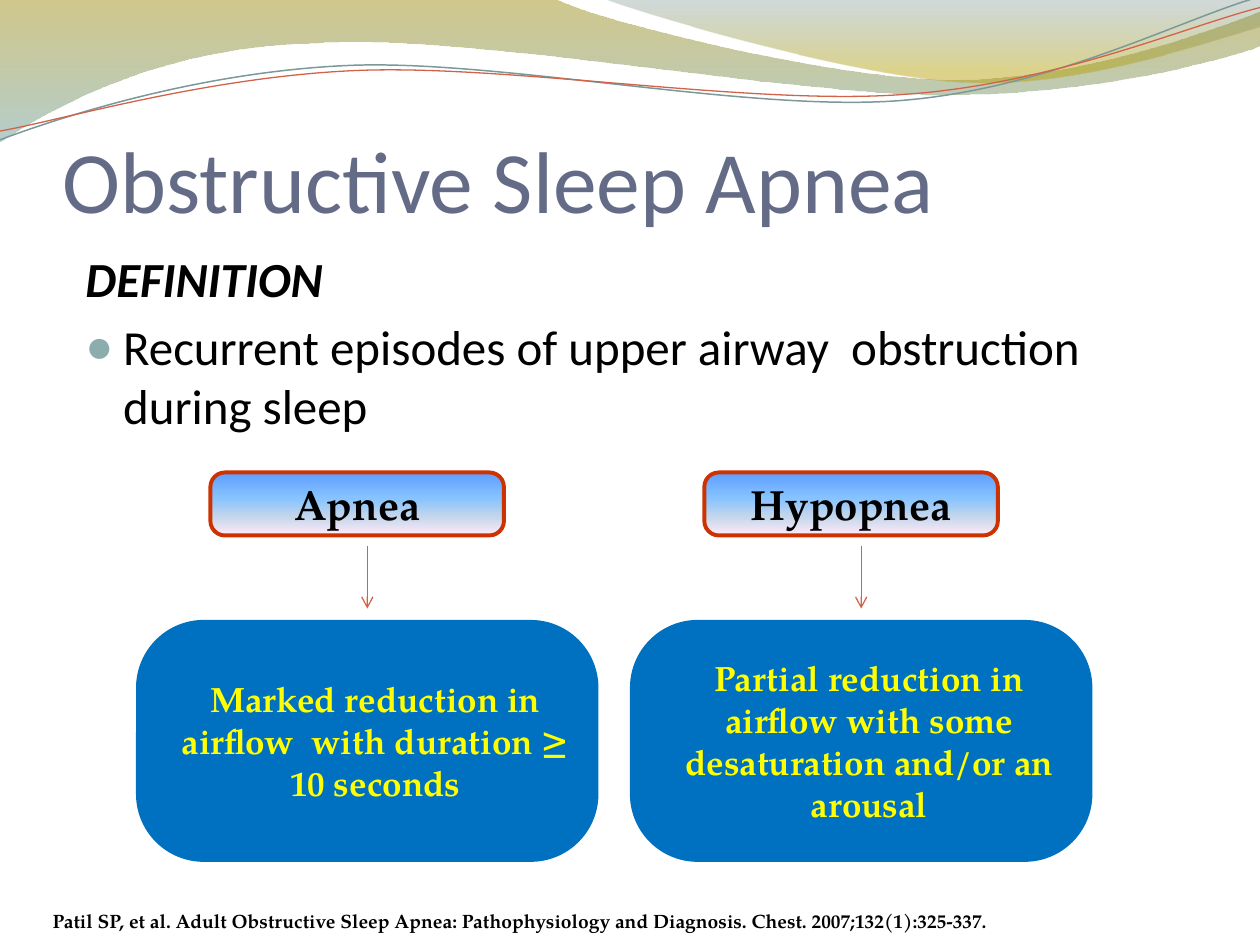
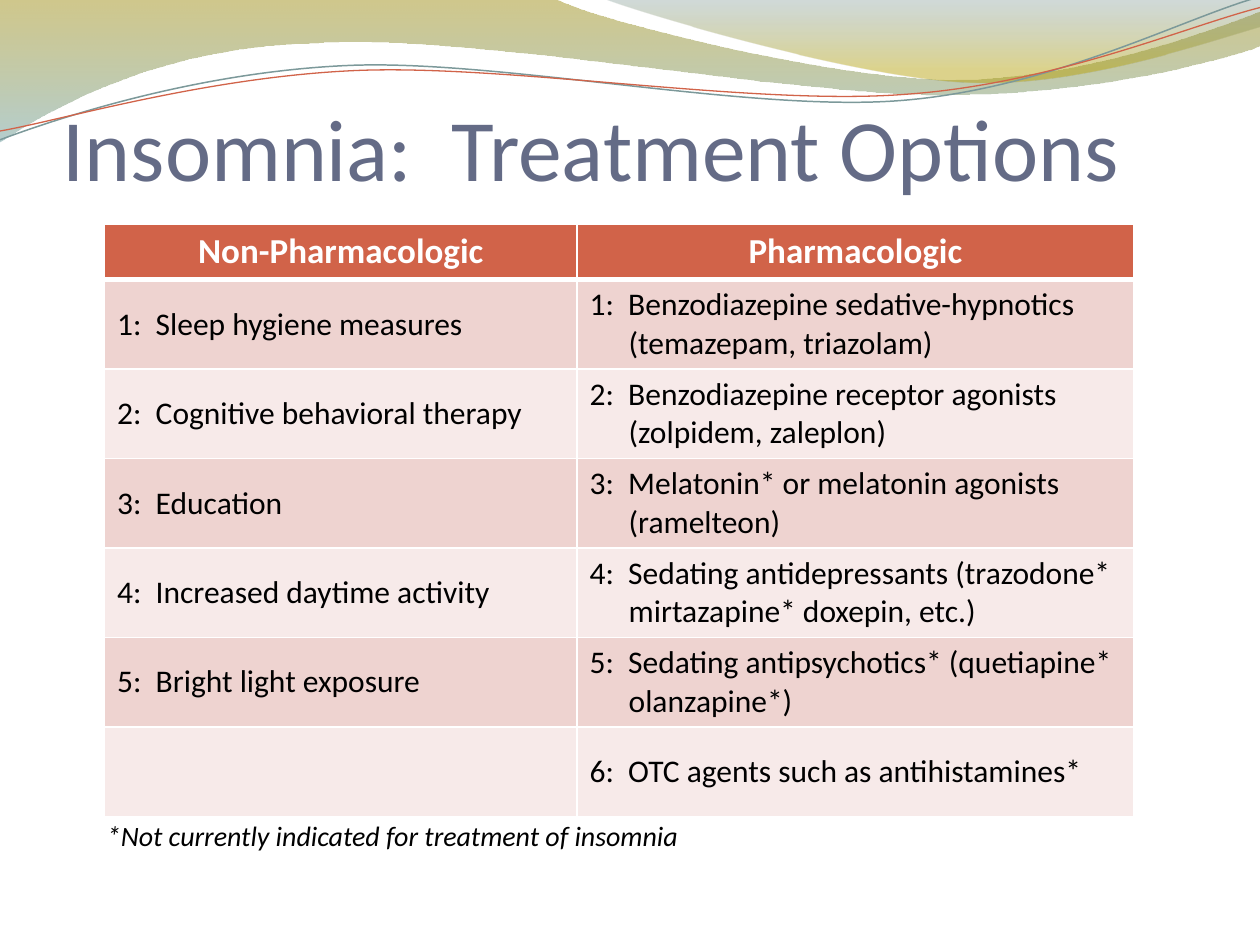
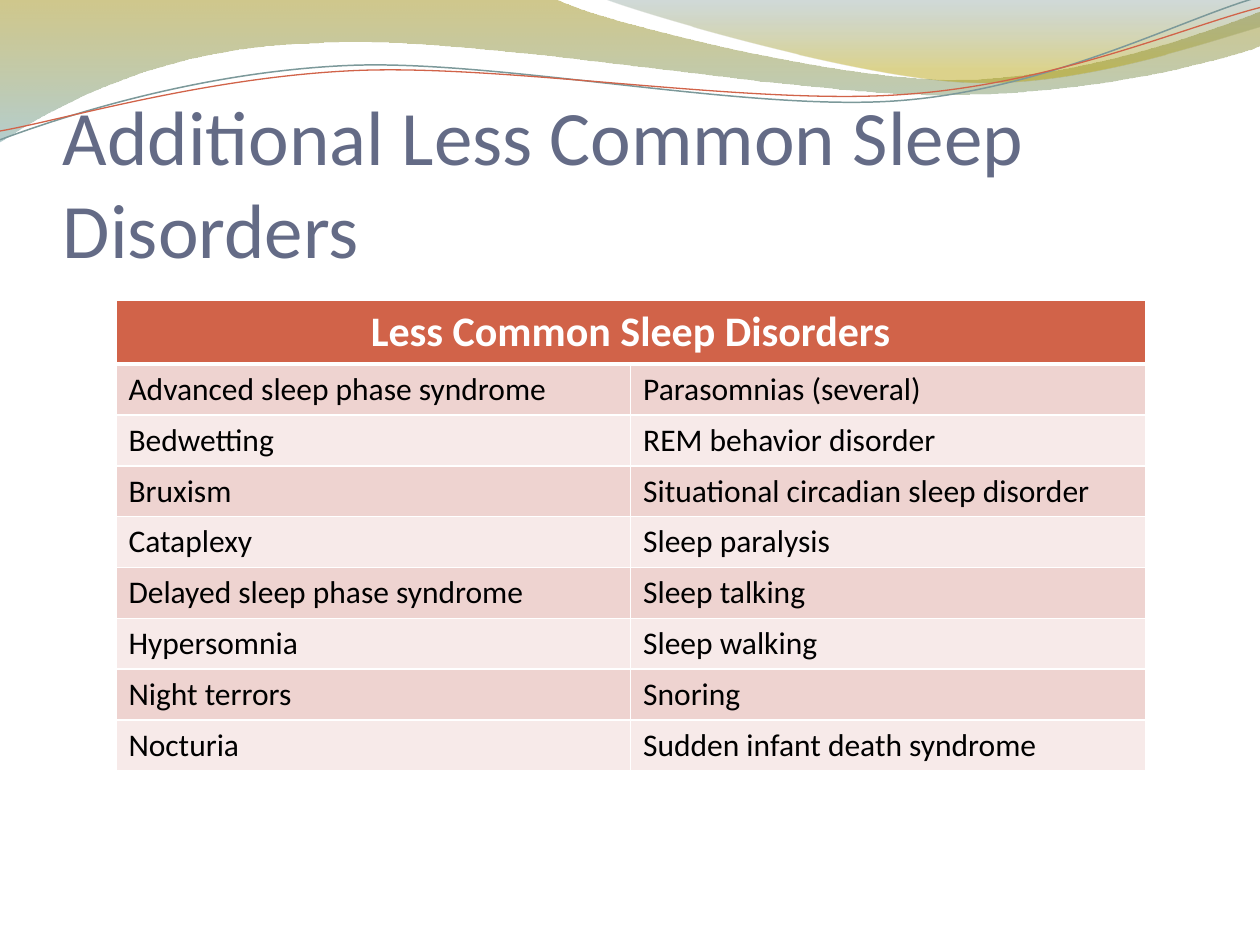
"""Build three slides on sleep disorders: apnea definition, insomnia treatment, rarer disorders."""
from dataclasses import dataclass

from pptx import Presentation, util as u
from pptx.dml.color import RGBColor
from pptx.enum import shapes, text
from pptx.oxml.ns import qn
from pptx.oxml.xmlchemy import OxmlElement


@dataclass(frozen=True)
class Theme:
    sans: str = "Calibri"
    serif: str = "TeX Gyre Pagella"
    bullet_font: str = "Arial"
    title: str = "646B86"
    ink: str = "000000"
    paper: str = "FFFFFF"
    accent: str = "D16349"
    bullet: str = "8CADAE"
    wave: str = "7C999A"
    box: str = "0070C0"
    box_text: str = "FFFF00"
    tag_line: str = "CC3300"
    bands: tuple = ("EED3D0", "F7EAE9")
    title_size: int = 50
    long_title_size: int = 44
    body_size: int = 28
    tag_size: int = 24
    box_size: int = 20
    cell_size: int = 18
    note_size: int = 16
    cite_size: int = 11


T = Theme()

TAG_STOPS = [(0, "5E9EFF", 100), (40, "85C2FF", 100), (70, "C4D6EB", 100), (100, "FFEBFA", 100)]

BANDS = [
    ([(0, "978500", 45), (100, "77A5A6", 55)],
     [[(0, 0)], [(4.4, -0.01)],
      [(4.76, 0.17), (6.64, 0.63), (7.58, 0.63)],
      [(8.53, 0.63), (9.58, 0.26), (10, 0.09)],
      [(10.01, 0.36)],
      [(9.83, 0.44), (8.7, 0.76), (7.46, 0.75)],
      [(6.22, 0.75), (3.82, 0.28), (2.57, 0.34)],
      [(1.29, 0.36), (0.46, 0.83), (-0.01, 1.13)],
      [(0, 0)]]),
    ([(0, "648484", 30), (80, "B49F00", 45)],
     [[(4.79, -0.01)],
      [(5.09, 0.11), (6.82, 0.62), (7.69, 0.65)],
      [(8.56, 0.69), (9.61, 0.32), (10, 0.21)],
      [(10, 0)], [(4.79, -0.01)]]),
]
WAVES = [
    (T.wave, 0.85,
     [[(0, 1.11)],
      [(0.48, 0.93), (1.58, 0.57), (2.77, 0.52)],
      [(3.95, 0.47), (5.93, 0.89), (7.13, 0.8)],
      [(8.33, 0.71), (9.38, 0.15), (9.98, -0.02)]]),
    (T.accent, 0.75,
     [[(0, 1.04)],
      [(0.47, 0.96), (1.64, 0.61), (2.83, 0.56)],
      [(4.03, 0.51), (5.97, 0.84), (7.17, 0.75)],
      [(8.36, 0.67), (9.41, 0.21), (10, 0.06)]]),
]

APNEA_TITLE = "Obstructive Sleep Apnea"
DEFINITION = ["DEFINITION", "Recurrent episodes of upper airway  obstruction during sleep"]
EVENTS = [
    ("Apnea", "Marked reduction in airflow  with duration ≥ 10 seconds"),
    ("Hypopnea", "Partial reduction in airflow with some desaturation and/or an arousal"),
]
CITATION = ("Patil SP, et al. Adult Obstructive Sleep Apnea: Pathophysiology and Diagnosis. "
            "Chest. 2007;132(1):325-337.")

INSOMNIA_TITLE = "Insomnia:  Treatment Options"
TREATMENTS = [
    ("Non-Pharmacologic", "Pharmacologic"),
    ("1:  Sleep hygiene measures", "1:  Benzodiazepine sedative-hypnotics (temazepam, triazolam)"),
    ("2:  Cognitive behavioral therapy", "2:  Benzodiazepine receptor agonists (zolpidem, zaleplon)"),
    ("3:  Education", "3:  Melatonin* or melatonin agonists (ramelteon)"),
    ("4:  Increased daytime activity",
     "4:  Sedating antidepressants (trazodone* mirtazapine* doxepin, etc.)"),
    ("5:  Bright light exposure", "5:  Sedating antipsychotics* (quetiapine* olanzapine*)"),
    ("", "6:  OTC agents such as antihistamines*"),
]
TREATMENT_NOTE = "*Not currently indicated for treatment of insomnia"

DISORDERS_TITLE = "Additional Less Common Sleep Disorders"
DISORDERS = [
    ("Less Common Sleep Disorders", ""),
    ("Advanced sleep phase syndrome", "Parasomnias (several)"),
    ("Bedwetting", "REM behavior disorder"),
    ("Bruxism", "Situational circadian sleep disorder"),
    ("Cataplexy", "Sleep paralysis"),
    ("Delayed sleep phase syndrome", "Sleep talking"),
    ("Hypersomnia", "Sleep walking"),
    ("Night terrors", "Snoring"),
    ("Nocturia", "Sudden infant death syndrome"),
]


def inches(*values):
    return [u.Inches(v) for v in values]


def rgb(value):
    return RGBColor.from_string(value)


def add(parent, tag, **attrs):
    child = OxmlElement(tag)
    for key, value in attrs.items():
        child.set(key, str(value))
    parent.append(child)
    return child


def style(p, size, color, font=T.sans, bold=False, italic=False):
    for r in p.runs:
        r.font.size, r.font.name = u.Pt(size), font
        r.font.bold, r.font.italic = bold, italic
        r.font.color.rgb = rgb(color)


def indent(p, left, first):
    pPr = p._p.get_or_add_pPr()
    pPr.set("marL", str(u.Inches(left)))
    pPr.set("indent", str(u.Inches(first)))
    return pPr


def gradient(s, stops):
    s.fill.gradient()
    grad = s._element.spPr.find(qn("a:gradFill"))
    for child in list(grad):
        grad.remove(child)
    stop_list = add(grad, "a:gsLst")
    for place, color, opacity in stops:
        clr = add(add(stop_list, "a:gs", pos=place * 1000), "a:srgbClr", val=color)
        if opacity < 100:
            add(clr, "a:alpha", val=opacity * 1000)
    add(grad, "a:lin", ang=5400000, scaled=0)


def add_outline(slide, segments, close):
    start, *points = [inches(*point) for seg in segments for point in seg]
    builder = slide.shapes.build_freeform(*start)
    builder.add_line_segments(points, close=close)
    s = builder.convert_to_shape()
    s.shadow.inherit = False
    outline = s._element.spPr.find(".//" + qn("a:path"))
    steps = iter(outline.findall(qn("a:lnTo")))
    for seg in segments[1:]:
        lines = [next(steps) for _ in seg]
        if len(lines) == 3:
            curve = OxmlElement("a:cubicBezTo")
            lines[0].addprevious(curve)
            for line in lines:
                curve.append(line[0])
                outline.remove(line)
    return s


def add_waves(slide):
    for stops, segments in BANDS:
        s = add_outline(slide, segments, True)
        gradient(s, stops)
        s.line.fill.background()
    for color, width, segments in WAVES:
        s = add_outline(slide, segments, False)
        s.fill.background()
        s.line.color.rgb, s.line.width = rgb(color), u.Pt(width)


def share_waves(slide):
    layout = slide.slide_layout
    tree = layout.shapes._spTree
    for holder in list(layout.placeholders):
        tree.remove(holder._element)
    add_waves(slide)
    for s in list(slide.shapes):
        tree.append(s._element)


def add_text(slide, box, lines, anchor=text.MSO_ANCHOR.TOP):
    tf = slide.shapes.add_textbox(*inches(*box)).text_frame
    tf.word_wrap = True
    tf.vertical_anchor = anchor
    tf.text = "\n".join(lines)
    return tf


def add_title(slide, title, box, size=T.title_size):
    tf = add_text(slide, box, [title], text.MSO_ANCHOR.BOTTOM)
    tf.margin_left = tf.margin_right = tf.margin_bottom = 0
    style(tf.paragraphs[0], size, T.title)


def add_box(slide, box, label, radius, size, color):
    s = slide.shapes.add_shape(shapes.MSO_SHAPE.ROUNDED_RECTANGLE, *inches(*box))
    s.adjustments[0] = radius
    s.shadow.inherit = False
    tf = s.text_frame
    tf.text = label
    tf.word_wrap = True
    tf.vertical_anchor = text.MSO_ANCHOR.MIDDLE
    p = tf.paragraphs[0]
    p.alignment = text.PP_ALIGN.CENTER
    style(p, size, color, T.serif, bold=True)
    return s


def add_arrow(slide, x, top, bottom):
    s = slide.shapes.add_connector(shapes.MSO_CONNECTOR.STRAIGHT, *inches(x, top, x, bottom))
    s.line.color.rgb, s.line.width = rgb(T.accent), u.Pt(0.75)
    add(s.line._get_or_add_ln(), "a:tailEnd", type="arrow")
    add(s._element.spPr, "a:effectLst")


def add_event(slide, left, name, meaning):
    width = 3.67
    tag = add_box(slide, (left + 0.59, 3.75, 2.33, 0.5), name, 0.23, T.tag_size, T.ink)
    gradient(tag, TAG_STOPS)
    tag.line.color.rgb, tag.line.width = rgb(T.tag_line), u.Pt(2.25)
    s = add_box(slide, (left, 4.92, width, 1.92), meaning, 0.28, T.box_size, T.box_text)
    s.fill.solid()
    s.fill.fore_color.rgb = rgb(T.box)
    s.line.fill.background()
    tf = s.text_frame
    tf.margin_left = tf.margin_right = tf.margin_top = tf.margin_bottom = 0
    indent(tf.paragraphs[0], 0.13, 0)
    add_arrow(slide, left + width / 2, 4.33, 4.83)


def set_borders(cell, top, bottom):
    tcPr = cell._tc.get_or_add_tcPr()
    for side, width in (("L", 1), ("R", 1), ("T", top), ("B", bottom)):
        ln = add(tcPr, f"a:ln{side}", w=u.Pt(width))
        add(add(ln, "a:solidFill"), "a:srgbClr", val=T.paper)


def add_grid(slide, left, top, widths, height, head_height, head_size, rows):
    body_rows = len(rows) - 1
    heights = [head_height] + [(height - head_height) / body_rows] * body_rows
    frame = slide.shapes.add_table(len(rows), len(widths),
                                   *inches(left, top, sum(widths), height))
    table = frame.table
    for col, width in zip(table.columns, widths):
        col.width = u.Inches(width)
    for i, (row, row_height) in enumerate(zip(rows, heights)):
        table.rows[i].height = u.Inches(row_height)
        for j, label in enumerate(row):
            cell = table.cell(i, j)
            set_borders(cell, 3 if i == 1 else 1, 3 if i == 0 else 1)
            cell.fill.solid()
            cell.fill.fore_color.rgb = rgb(T.bands[(i - 1) % 2] if i else T.accent)
            cell.vertical_anchor = text.MSO_ANCHOR.MIDDLE
            cell.text_frame.text = label
            p = cell.text_frame.paragraphs[0]
            if i:
                indent(p, 0.31, -0.31)
                style(p, T.cell_size, T.ink)
            else:
                p.alignment = text.PP_ALIGN.CENTER
                style(p, head_size, T.paper, bold=True)
    return table


def fill_apnea(slide):
    add_title(slide, APNEA_TITLE, (0.5, 0.58, 9, 1.25))
    tf = add_text(slide, (0.58, 1.92, 9, 4.32), DEFINITION)
    heading, point = tf.paragraphs
    for p in (heading, point):
        p.space_before = u.Pt(T.body_size * 0.2)
        style(p, T.body_size, T.ink, bold=p is heading, italic=p is heading)
        pPr = indent(p, 0.3, -0.3)
    add(add(pPr, "a:buClr"), "a:srgbClr", val=T.bullet)
    add(pPr, "a:buSzPct", val=95000)
    add(pPr, "a:buFont", typeface=T.bullet_font)
    add(pPr, "a:buChar", char="●")
    tf = add_text(slide, (0.32, 7.17, 9.35, 0.29), [CITATION])
    style(tf.paragraphs[0], T.cite_size, T.ink, T.serif, bold=True)
    for i, (name, meaning) in enumerate(EVENTS):
        add_event(slide, 1.08 + i * 3.92, name, meaning)


def fill_insomnia(slide):
    add_title(slide, INSOMNIA_TITLE, (0.5, 0.58, 9.33, 1))
    add_grid(slide, 0.83, 1.78, (3.75, 4.42), 4.7, 0.44, T.box_size, TREATMENTS)
    tf = add_text(slide, (0.75, 6.45, 8.25, 0.55), [TREATMENT_NOTE])
    tf.paragraphs[0].space_before = u.Pt(T.note_size * 0.2)
    style(tf.paragraphs[0], T.note_size, T.ink, italic=True)


def fill_disorders(slide):
    add_title(slide, DISORDERS_TITLE, (0.5, 1.25, 9, 0.92), T.long_title_size)
    table = add_grid(slide, 0.92, 2.38, [8.17 / 2] * 2, 3.74, 0.51, T.tag_size, DISORDERS)
    table.cell(0, 0).merge(table.cell(0, 1))


def main():
    prs = Presentation()
    prs.slide_width, prs.slide_height = inches(10, 7.5)
    fills = (fill_apnea, fill_insomnia, fill_disorders)
    slides = [prs.slides.add_slide(prs.slide_layouts[6]) for _ in fills]
    share_waves(slides[0])
    for fill, slide in zip(fills, slides):
        fill(slide)
    prs.save("out.pptx")


if __name__ == "__main__":
    main()
